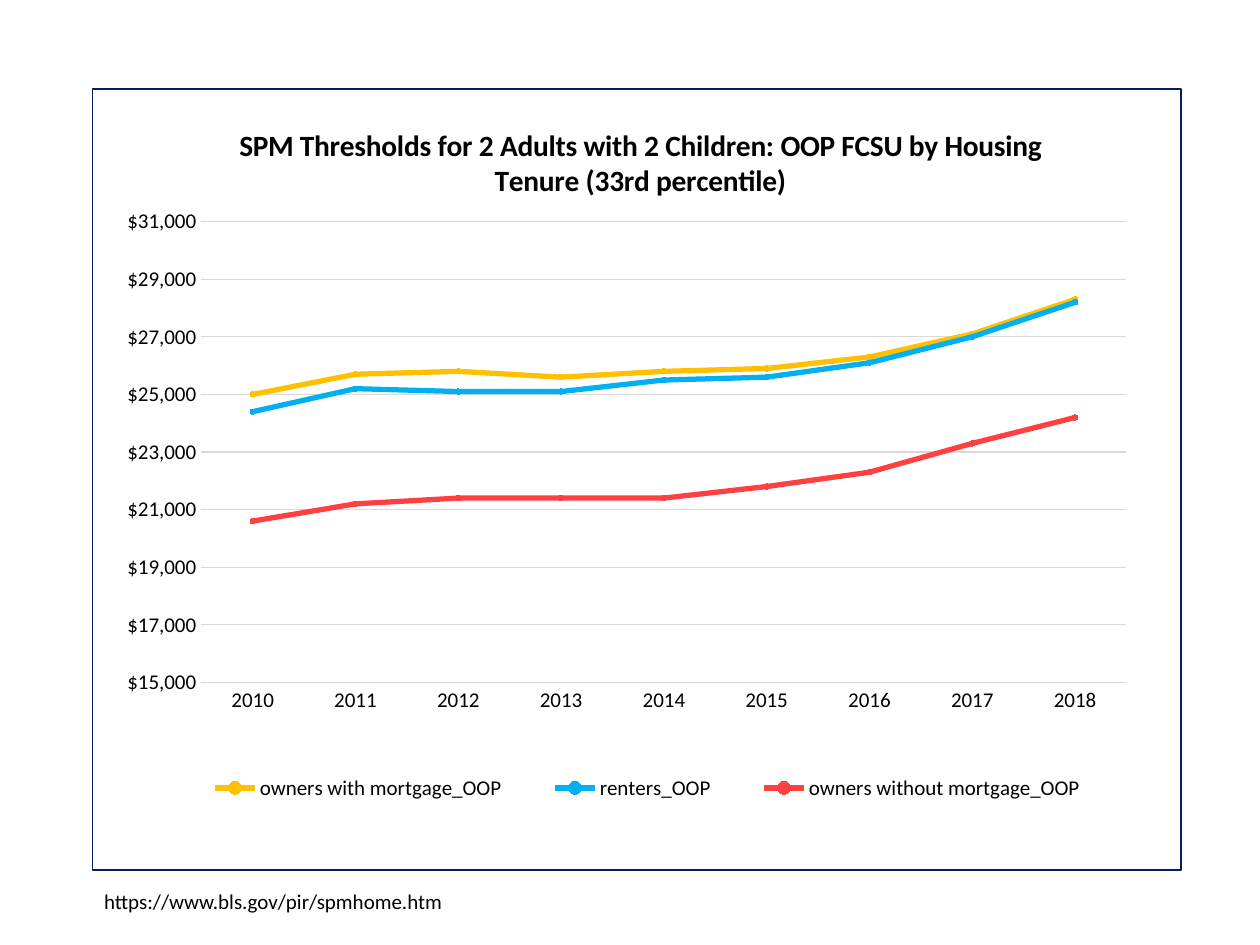
from dataclasses import dataclass

from lxml import etree
from pptx import Presentation
from pptx.chart.data import CategoryChartData
from pptx.dml.color import RGBColor
from pptx.enum.chart import XL_CHART_TYPE, XL_LEGEND_POSITION, XL_MARKER_STYLE, XL_TICK_MARK
from pptx.enum.text import MSO_AUTO_SIZE
from pptx.oxml import parse_xml
from pptx.oxml.ns import nsdecls, qn
from pptx.util import Cm, Pt

LINE_MARKERS = XL_CHART_TYPE.LINE_MARKERS
BOTTOM = XL_LEGEND_POSITION.BOTTOM
CIRCLE = XL_MARKER_STYLE.CIRCLE
NO_TICK = XL_TICK_MARK.NONE
FIT_SHAPE = MSO_AUTO_SIZE.SHAPE_TO_FIT_TEXT


@dataclass(frozen=True)
class Theme:
    font: str = "Calibri"
    text: str = "000000"
    grid: str = "D9D9D9"
    border: str = "002060"
    paper: str = "FFFFFF"
    title_size: float = 16.8
    body_size: float = 12
    thin: float = 0.75
    thick: float = 3
    marker_size: int = 3


TITLE = "SPM Thresholds for 2 Adults with 2 Children: OOP FCSU by Housing Tenure (33rd percentile)"
YEARS = [str(year) for year in range(2010, 2019)]
# name, line colour, marker colour, thresholds in dollars
TENURES = [
    ("owners with mortgage_OOP", "FFC000", "FFC000",
     [25000, 25700, 25800, 25600, 25800, 25900, 26300, 27100, 28300]),
    ("renters_OOP", "00B0F0", "00B0F0",
     [24400, 25200, 25100, 25100, 25500, 25600, 26100, 27000, 28200]),
    ("owners without mortgage_OOP", "FF4040", "C00000",
     [20600, 21200, 21400, 21400, 21400, 21800, 22300, 23300, 24200]),
]


class SlideBuilder:
    def __init__(self, slide, theme):
        self.slide = slide
        self.theme = theme

    def style_font(self, font, size, bold=False):
        font.name = self.theme.font
        font.size = Pt(size)
        font.bold = bold
        font.color.rgb = RGBColor.from_string(self.theme.text)

    def style_line(self, line, color, width):
        line.color.rgb = RGBColor.from_string(color)
        line.width = Pt(width)

    def place(self, element, index, target="", **fractions):
        """Give a chart part a manual layout in fractions of the chart."""
        for old in element.findall(qn("c:layout")):
            element.remove(old)
        layout = etree.Element(qn("c:layout"))
        manual = etree.SubElement(layout, qn("c:manualLayout"))
        if target:
            etree.SubElement(manual, qn("c:layoutTarget"), val=target)
        for key in ("x", "y"):
            etree.SubElement(manual, qn(f"c:{key}Mode"), val="edge")
        for key, value in fractions.items():
            etree.SubElement(manual, qn(f"c:{key}"), val=str(value))
        element.insert(index, layout)

    def line_chart(self, title, categories, rows, left, top, width, height):
        theme = self.theme
        data = CategoryChartData(number_format='"$"#,##0')
        data.categories = categories
        for name, _, _, values in rows:
            data.add_series(name, values)
        chart = self.slide.shapes.add_chart(
            LINE_MARKERS, left, top, width, height, data).chart
        self.style_font(chart.font, theme.body_size)
        self.place(chart._chartSpace.chart.plotArea, 0, "inner",
                   x=0.1, y=0.17, w=0.85, h=0.59)

        # Frame
        chart.font._element.getparent()
        frame = parse_xml(
            f'<c:spPr {nsdecls("c", "a")}>'
            f'<a:solidFill><a:srgbClr val="{theme.paper}"/></a:solidFill>'
            f'<a:ln w="{Pt(theme.thin)}"><a:solidFill>'
            f'<a:srgbClr val="{theme.border}"/></a:solidFill></a:ln></c:spPr>')
        chart._chartSpace.find(qn("c:txPr")).addprevious(frame)

        # Title
        chart.has_title = True
        span = chart.chart_title.text_frame.paragraphs[0].add_run()
        span.text = title
        self.style_font(span.font, theme.title_size, bold=True)
        self.place(chart.chart_title._element, 1, x=0.13, y=0.04)

        # Legend
        chart.has_legend = True
        chart.legend.position = BOTTOM
        chart.legend.include_in_layout = False
        self.style_font(chart.legend.font, theme.body_size)
        self.place(chart.legend._element, 1, x=0.07, y=0.85, w=0.88, h=0.09)

        # Axes
        for axis in (chart.category_axis, chart.value_axis):
            axis.major_tick_mark = axis.minor_tick_mark = NO_TICK
            self.style_font(axis.tick_labels.font, theme.body_size)
        self.style_line(chart.category_axis.format.line, theme.grid, theme.thin)
        scale = chart.value_axis
        scale.minimum_scale, scale.maximum_scale, scale.major_unit = 15000, 31000, 2000
        scale.tick_labels.number_format = '"$"#,##0'
        scale.tick_labels.number_format_is_linked = False
        scale.format.line.fill.background()
        self.style_line(scale.major_gridlines.format.line, theme.grid, theme.thin)

        # Series
        plot = chart.plots[0]
        plot.vary_by_categories = False
        for series, (_, color, marker_color, _) in zip(plot.series, rows):
            series.smooth = False
            self.style_line(series.format.line, color, theme.thick)
            marker = series.marker
            marker.style = CIRCLE
            marker.size = theme.marker_size
            marker.format.fill.solid()
            marker.format.fill.fore_color.rgb = RGBColor.from_string(marker_color)
            self.style_line(marker.format.line, marker_color, theme.thin)

    def label(self, text, left, top, width, height):
        box = self.slide.shapes.add_textbox(left, top, width, height)
        box.text_frame.word_wrap = False
        box.text_frame.auto_size = FIT_SHAPE
        para = box.text_frame.paragraphs[0]
        span = para.add_run()
        span.text = text
        self.style_font(span.font, self.theme.body_size)


def main():
    deck = Presentation()
    deck.slide_width, deck.slide_height = Cm(25.4), Cm(19.05)
    page = SlideBuilder(deck.slides.add_slide(deck.slide_layouts[6]), Theme())

    # Thresholds by housing tenure
    page.line_chart(TITLE, YEARS, TENURES, Cm(1.85), Cm(1.78), Cm(21.97), Cm(15.77))

    # Source address
    page.label("https://www.bls.gov/pir/spmhome.htm", Cm(1.85), Cm(17.78), Cm(7.42), Cm(0.76))

    deck.save("out.pptx")


if __name__ == "__main__":
    main()
